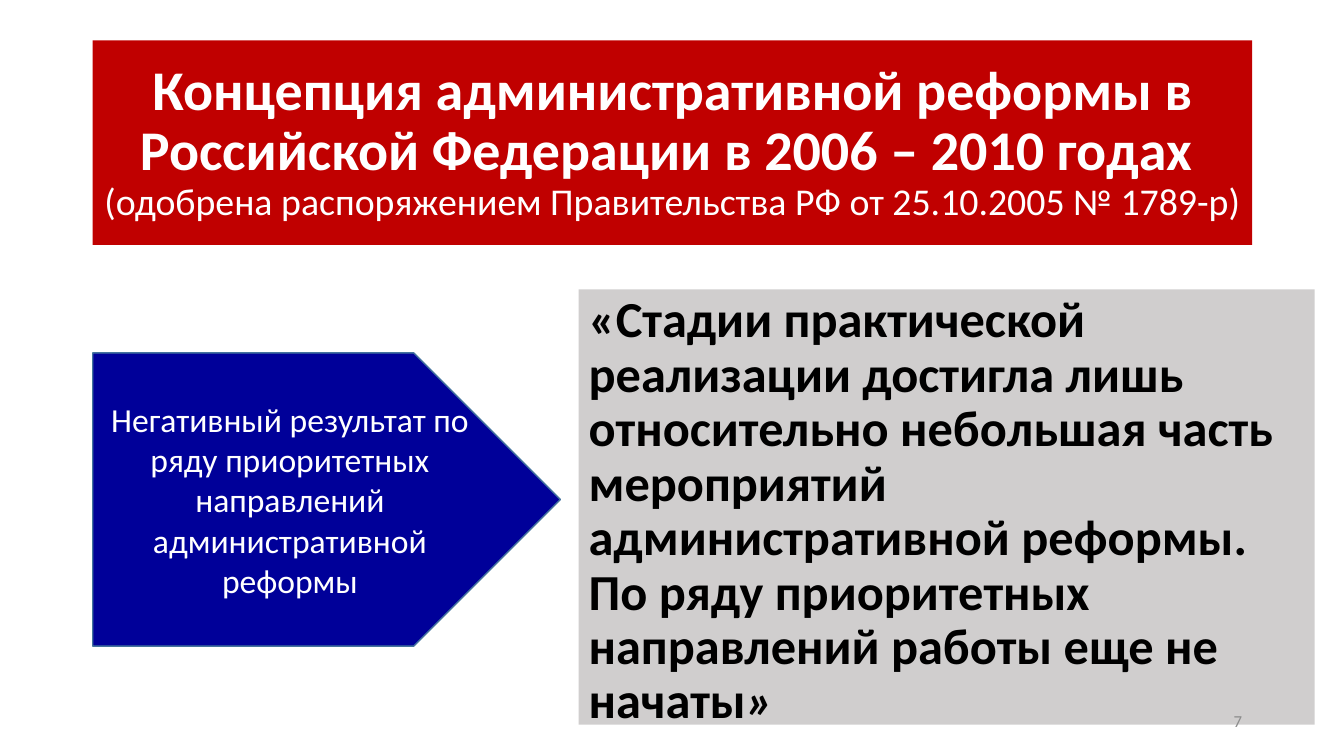
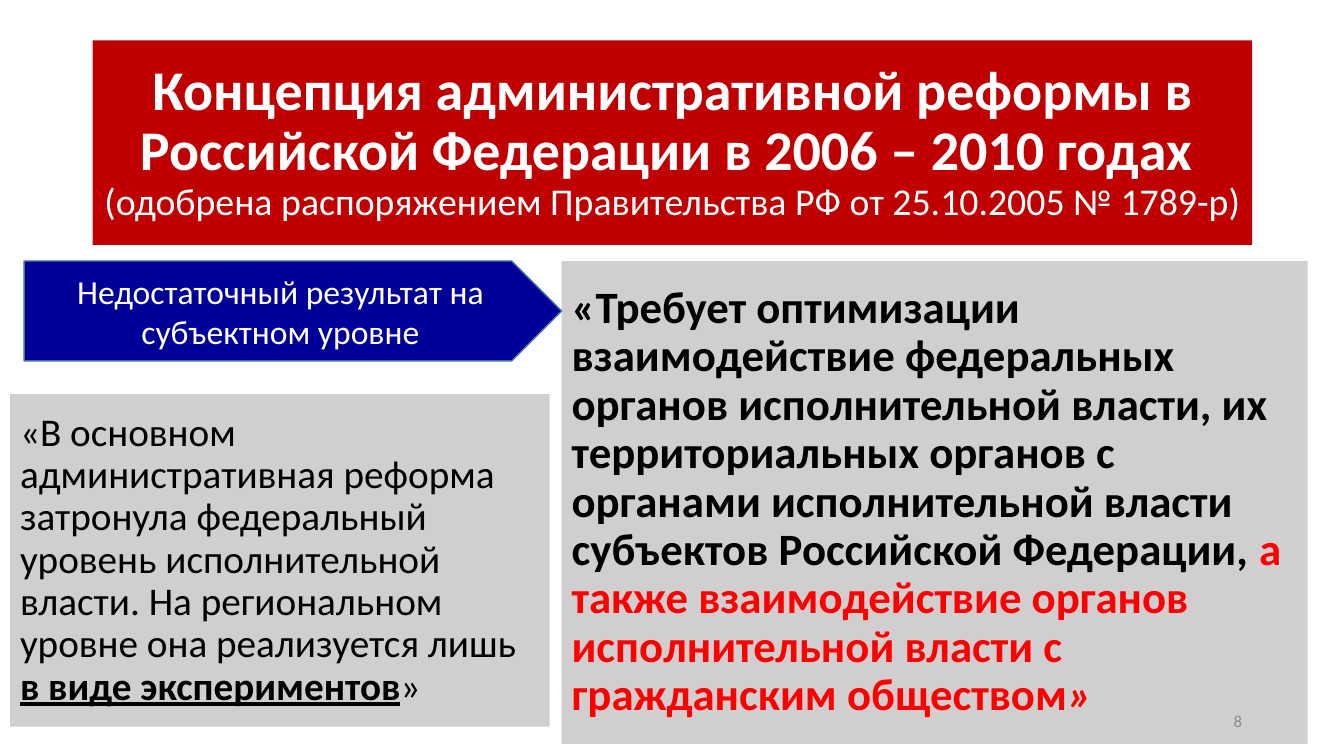
import copy

import pptx
import pptx.dml.color
import pptx.enum.shapes
import pptx.enum.text
import pptx.util

RED, NAVY, GREY = "C00000", "000099", "D0CECE"
NAVY_EDGE, WHITE, BLACK, ACCENT, PAGE_GREY = "43739E", "FFFFFF", "000000", "FF0000", "8C8C8C"
PRESETS = pptx.enum.shapes.MSO_SHAPE
ALIGN = pptx.enum.text.PP_ALIGN
ANCHOR = pptx.enum.text.MSO_ANCHOR


def rgb(hex_colour):
    return pptx.dml.color.RGBColor.from_string(hex_colour)


def write(shape, runs, size, colour=BLACK, bold=False, align=ALIGN.LEFT,
          anchor=ANCHOR.MIDDLE, spacing=None, before=None):
    """Fill the shape with one paragraph; each run is (text, format changes)."""
    frame = shape.text_frame
    frame.word_wrap = True
    frame.auto_size = pptx.enum.text.MSO_AUTO_SIZE.NONE
    frame.vertical_anchor = anchor
    paragraph = frame.paragraphs[0]
    paragraph.alignment = align
    if spacing:
        paragraph.line_spacing = spacing
    if before:
        paragraph.space_before = pptx.util.Pt(before)
    for text, changes in runs:
        run = paragraph.add_run()
        run.text = text.rstrip("\n")
        run.font.name = "Calibri"
        run.font.size = pptx.util.Pt(changes.get("size", size))
        run.font.bold = changes.get("bold", bold)
        run.font.italic = changes.get("italic", False)
        run.font.underline = changes.get("underline", False)
        run.font.color.rgb = rgb(changes.get("colour", colour))
        if text.endswith("\n"):
            # The break keeps the height of the line it ends.
            paragraph.add_line_break()
            paragraph._p[-1].append(copy.deepcopy(run._r.rPr))


heading = [
    ("Концепция административной реформы в Российской Федерации в 2006 – 2010 годах \n", {}),
    ("(одобрена распоряжением Правительства РФ от 25.10.2005 № 1789-р)",
     {"size": 27, "bold": False}),
]
heading_style = dict(size=40, colour=WHITE, bold=True, align=ALIGN.CENTER, spacing=0.9)
arrow_style = dict(size=24, colour=WHITE, align=ALIGN.CENTER)
quote_style = dict(spacing=0.9, before=10)
page_style = dict(size=12, colour=PAGE_GREY, align=ALIGN.RIGHT)

# Boxes are left, top, width, height in percent of the slide.
heading_box = (6.9, 5.33, 86.27, 27.07)
page_box = (70.67, 92.67, 22.5, 5.33)
row_top = 34.53

pages = {
    7: [
        ("quote", (43.06, 38.27, 54.76, 57.6), [
            ("«Стадии практической реализации достигла лишь относительно небольшая часть "
             "мероприятий административной реформы. По ряду приоритетных направлений "
             "работы еще не начаты", {}),
            ("»", {"italic": True}),
        ], dict(quote_style, size=36, bold=True, anchor=ANCHOR.TOP)),
        ("arrow", (6.9, 46.67, 34.8, 38.8), [
            ("Негативный результат по ряду приоритетных направлений административной реформы", {}),
        ], arrow_style),
    ],
    8: [
        ("quote", (41.79, row_top, 55.51, 63.87), [
            ("«Требует оптимизации взаимодействие федеральных органов исполнительной власти, "
             "их территориальных органов с органами исполнительной власти субъектов "
             "Российской Федерации, ", {}),
            ("а также взаимодействие органов исполнительной власти с гражданским обществом",
             {"colour": ACCENT}),
            ("»", {"colour": ACCENT, "italic": True}),
        ], dict(quote_style, size=32, bold=True)),
        ("arrow", (1.8, row_top, 39.99, 13.2), [
            ("Недостаточный результат на субъектном уровне", {}),
        ], arrow_style),
        ("quote", (0.75, 52.13, 40.14, 44), [
            ("«В основном административная реформа затронула федеральный уровень "
             "исполнительной власти. На региональном уровне она реализуется лишь ", {}),
            ("в виде экспериментов", {"bold": True, "underline": True}),
            ("»", {}),
        ], dict(quote_style, size=28)),
    ],
}
looks = {  # role: preset, fill, outline
    "quote": (PRESETS.RECTANGLE, GREY, None),
    "arrow": (PRESETS.PENTAGON, NAVY, NAVY_EDGE),
}

deck = pptx.Presentation()
deck.slide_width = pptx.util.Inches(13.33)
deck.slide_height = pptx.util.Inches(7.5)
slide_size = (deck.slide_width, deck.slide_height) * 2
title_only = deck.slide_layouts[5]

for number, blocks in pages.items():
    slide = deck.slides.add_slide(title_only)

    title = slide.shapes.title
    title.left, title.top, title.width, title.height = (
        int(full * share / 100) for full, share in zip(slide_size, heading_box))
    title.fill.solid()
    title.fill.fore_color.rgb = rgb(RED)
    write(title, heading, **heading_style)

    for role, box, runs, style in blocks:
        preset, fill, outline = looks[role]
        place = [int(full * share / 100) for full, share in zip(slide_size, box)]
        block = slide.shapes.add_shape(preset, *place)
        block.shadow.inherit = False
        block.fill.solid()
        block.fill.fore_color.rgb = rgb(fill)
        if outline:
            block.line.color.rgb = rgb(outline)
            block.line.width = pptx.util.Pt(1)
        else:
            block.line.fill.background()
        write(block, runs, **style)

    place = [int(full * share / 100) for full, share in zip(slide_size, page_box)]
    write(slide.shapes.add_textbox(*place), [(str(number), {})], **page_style)

deck.save("out.pptx")
